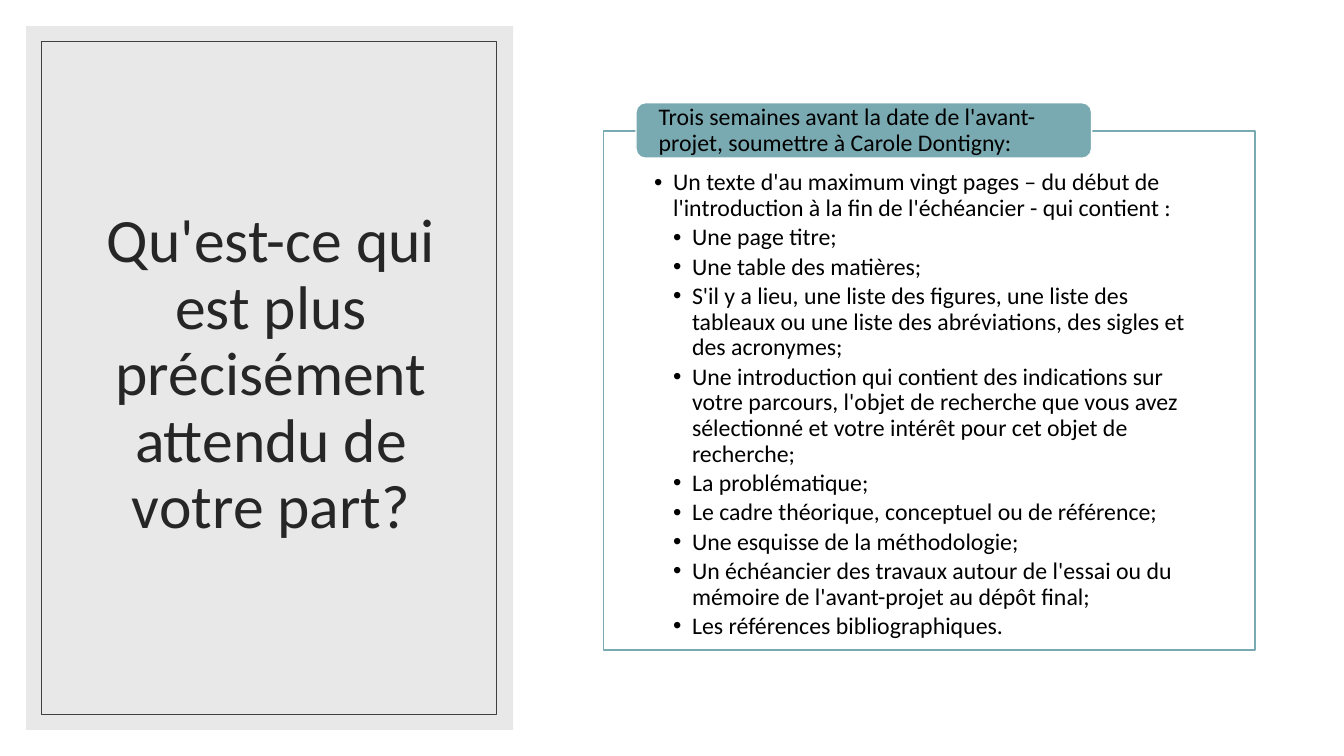
"""Build the slide on what is expected in the project proposal."""
from dataclasses import dataclass
from typing import Optional

import pptx
import pptx.dml.color
import pptx.enum.shapes
import pptx.enum.text
import pptx.oxml
import pptx.oxml.ns
import pptx.util
from lxml import etree

Pt = pptx.util.Pt
SHAPE = pptx.enum.shapes.MSO_SHAPE
ALIGN = pptx.enum.text.PP_ALIGN
ANCHOR = pptx.enum.text.MSO_ANCHOR
FONT = "Calibri"
TEXT_SIZE = 17
INDENT = 13.5
COLORS = {
    "white": "FFFFFF",
    "panel": "D9D9D9",
    "rule": "404040",
    "teal": "79AAB2",
    "title": "262626",
    "text": "000000",
}
TITLE = "Qu'est-ce qui est plus précisément attendu de votre part?"
HEADER = "Trois semaines avant la date de l'avant-projet, soumettre à Carole Dontigny:"
ITEMS = [
    (0, "Un texte d'au maximum vingt pages – du début de l'introduction à la fin de l'échéancier - qui contient :"),
    (1, "Une page titre;"),
    (1, "Une table des matières;"),
    (1, "S'il y a lieu, une liste des figures, une liste des tableaux ou une liste des abréviations, des sigles et des acronymes;"),
    (1, "Une introduction qui contient des indications sur votre parcours, l'objet de recherche que vous avez sélectionné et votre intérêt pour cet objet de recherche;"),
    (1, "La problématique;"),
    (1, "Le cadre théorique, conceptuel ou de référence;"),
    (1, "Une esquisse de la méthodologie;"),
    (1, "Un échéancier des travaux autour de l'essai ou du mémoire de l'avant-projet au dépôt final;"),
    (1, "Les références bibliographiques."),
]


@dataclass
class Box:
    left: float
    top: float
    width: float
    height: float
    kind: SHAPE = SHAPE.RECTANGLE
    fill: Optional[str] = None
    opacity: int = 100
    line: Optional[str] = None
    weight: float = 1


BACKDROP = Box(0, 0, 960, 540, fill="white")
PANEL = Box(18.7, 18.7, 347.8, 502.6, fill="panel", opacity=60)
PANEL_RULE = Box(29.5, 29.5, 324.7, 481, line="rule", weight=0.5)
FRAME = Box(431.3, 93.6, 465.1, 370.8, fill="white", opacity=90, line="teal")
HEADER_TAB = Box(454.3, 73.4, 325.4, 39.6, SHAPE.ROUNDED_RECTANGLE, "teal", line="white")
TITLE_AREA = Box(45.4, 43.9, 296.6, 449.3)


def rgb(name: str) -> pptx.dml.color.RGBColor:
    """Return a named colour."""
    return pptx.dml.color.RGBColor.from_string(COLORS[name])


def apply(target: object, values: dict) -> None:
    """Set each format value on the target."""
    for name, value in values.items():
        setattr(target, name, value)


def draw_box(s, box: Box):
    """Draw a preset shape with its fill and line."""
    sp = s.shapes.add_shape(box.kind, Pt(box.left), Pt(box.top), Pt(box.width), Pt(box.height))
    sp.shadow.inherit = False
    if box.fill:
        sp.fill.solid()
        sp.fill.fore_color.rgb = rgb(box.fill)
        if box.opacity < 100:
            clr = sp.element.spPr.find(".//" + pptx.oxml.ns.qn("a:srgbClr"))
            etree.SubElement(clr, pptx.oxml.ns.qn("a:alpha"), val=str(box.opacity * 1000))
    else:
        sp.fill.background()
    if box.line:
        sp.line.color.rgb = rgb(box.line)
        sp.line.width = Pt(box.weight)
    else:
        sp.line.fill.background()
    return sp


def place(s, sp, box: Box) -> None:
    """Move a placeholder to a box, in front of what is already drawn."""
    apply(sp, {"left": Pt(box.left), "top": Pt(box.top),
               "width": Pt(box.width), "height": Pt(box.height)})
    s.shapes.element.append(sp.element)


def format_frame(tf, anchor: ANCHOR, left: float, top: float, right: float, bottom: float) -> None:
    """Set anchor, insets and wrapping of a text frame."""
    apply(tf, {"word_wrap": True, "auto_size": pptx.enum.text.MSO_AUTO_SIZE.NONE,
               "vertical_anchor": anchor, "margin_left": Pt(left), "margin_top": Pt(top),
               "margin_right": Pt(right), "margin_bottom": Pt(bottom)})


def write(p, text: str, size: float, color: str, align: ALIGN, after: float = 0) -> None:
    """Write one formatted run in a paragraph."""
    apply(p, {"alignment": align, "line_spacing": 0.9,
              "space_before": Pt(0), "space_after": Pt(after)})
    r = p.add_run()
    r.text = text
    apply(r.font, {"name": FONT, "size": Pt(size), "bold": False})
    r.font.color.rgb = rgb(color)


def add_bullet(p, level: int) -> None:
    """Give a paragraph its level, hanging indent and round bullet."""
    p.level = level
    pPr = p._p.get_or_add_pPr()
    pPr.set("marL", str(Pt(INDENT * (level + 1))))
    pPr.set("indent", str(-Pt(INDENT)))
    etree.SubElement(pPr, pptx.oxml.ns.qn("a:buFont"), typeface="Arial")
    etree.SubElement(pPr, pptx.oxml.ns.qn("a:buChar"), char="•")


def main() -> None:
    """Build and save the slide."""
    prs = pptx.Presentation()
    apply(prs, {"slide_width": Pt(960), "slide_height": Pt(540)})
    s = prs.slides.add_slide(prs.slide_layouts[1])
    title, body = s.shapes.title, s.placeholders[1]

    draw_box(s, BACKDROP)
    draw_box(s, PANEL)
    place(s, title, TITLE_AREA)
    format_frame(title.text_frame, ANCHOR.MIDDLE, 7.2, 3.6, 7.2, 3.6)
    write(title.text_frame.paragraphs[0], TITLE, 44, "title", ALIGN.CENTER)
    draw_box(s, PANEL_RULE)

    draw_box(s, FRAME)
    place(s, body, FRAME)
    tf = body.text_frame
    format_frame(tf, ANCHOR.TOP, 36, 28.1, 36, 9.4)
    for i, (level, text) in enumerate(ITEMS):
        p = tf.add_paragraph() if i else tf.paragraphs[0]
        write(p, text, TEXT_SIZE, "text", ALIGN.LEFT, after=0.15 * TEXT_SIZE)
        add_bullet(p, level)

    tab = draw_box(s, HEADER_TAB)
    format_frame(tab.text_frame, ANCHOR.MIDDLE, 14.2, 0, 14.2, 0)
    write(tab.text_frame.paragraphs[0], HEADER, TEXT_SIZE, "text", ALIGN.LEFT)
    prs.save("out.pptx")


if __name__ == "__main__":
    main()
